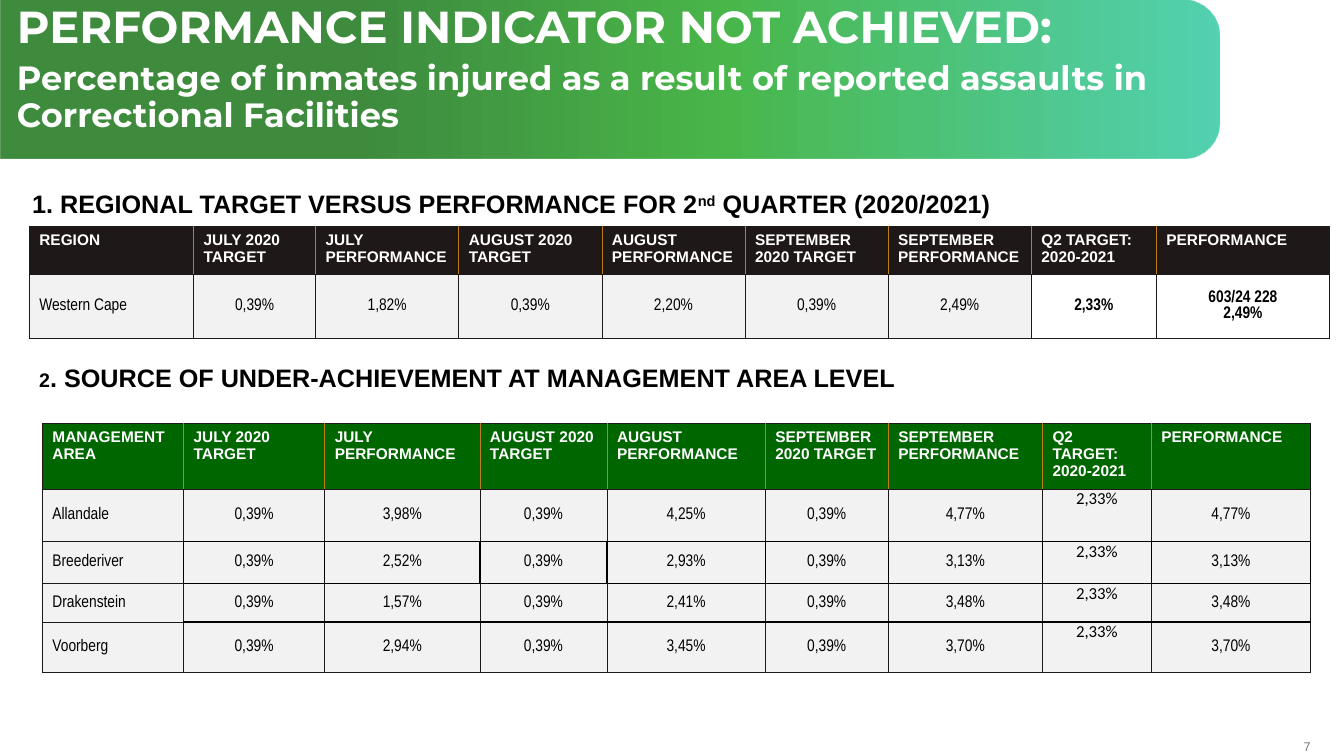
from dataclasses import dataclass

from lxml import etree
from pptx import Presentation
from pptx.dml.color import RGBColor
from pptx.enum.shapes import MSO_SHAPE as Shape
from pptx.enum.text import MSO_ANCHOR as Anchor, PP_ALIGN as Align
from pptx.oxml import parse_xml
from pptx.oxml.ns import nsdecls, qn
from pptx.util import Emu, Pt

PX = 9144


@dataclass(frozen=True)
class Theme:
    white: str = "FFFFFF"
    black: str = "000000"
    ink: str = "1E1918"
    green: str = "006600"
    orange: str = "BF7B17"
    cell: str = "F2F2F2"
    grey: str = "77787B"
    banner: tuple = ((30, "006600", 75), (59, "009900", 71), (100, "00BC8D", 67))
    title_font: str = "Montserrat"
    font: str = "Arial"
    narrow: str = "Arial Narrow"
    plain: str = "Calibri"
    title: int = 32
    subtitle: int = 24
    heading: int = 18
    small_heading: int = 14
    body: int = 12
    header: int = 11
    number: int = 9


THEME = Theme()
MONTHS = ["JULY 2020\vTARGET", "JULY PERFORMANCE", "AUGUST 2020\vTARGET",
          "AUGUST PERFORMANCE", "SEPTEMBER 2020 TARGET", "SEPTEMBER PERFORMANCE",
          "Q2 TARGET: 2020-2021", "PERFORMANCE"]
TARGET, Q2_TARGET = "0,39%", "2,33%"
Q2_COLUMN = 7
HEAVY_SIDES = {2: "LRTB", 3: "TB", 4: "T"}


def px(*lengths):
    return [Emu(round(length * PX)) for length in lengths]


def style(font, size, name, color, bold=False):
    font.size, font.name, font.bold = Pt(size), name, bold
    font.color.rgb = RGBColor.from_string(color)


def add_text_frame(page, box):
    frame = page.shapes.add_textbox(*px(*box)).text_frame
    frame.word_wrap = True
    return frame


def add_banner(page, box):
    left, top, width, height = box
    shift = (width - height) / 2
    band = page.shapes.add_shape(
        Shape.ROUND_2_SAME_RECTANGLE, *px(left + shift, top - shift, height, width))
    band.rotation = 90
    band.adjustments[0] = 0.233
    band.adjustments[1] = 0
    band.shadow.inherit = False
    band.line.fill.background()
    stops = "".join(
        f'<a:gs pos="{place * 1000}"><a:srgbClr val="{color}">'
        f'<a:alpha val="{alpha * 1000}"/></a:srgbClr></a:gs>'
        for place, color, alpha in THEME.banner)
    gradient = parse_xml(
        f'<a:gradFill {nsdecls("a")} rotWithShape="1"><a:gsLst>{stops}</a:gsLst>'
        '<a:lin ang="16200000" scaled="0"/></a:gradFill>')
    band._element.spPr.find(qn("a:prstGeom")).addnext(gradient)

    frame = add_text_frame(page, (left + 6, top, width - 10, 57))
    frame.text = ("PERFORMANCE INDICATOR NOT ACHIEVED:\n"
                  "Percentage of inmates injured as a result of reported assaults in "
                  "Correctional Facilities")
    for para, size in zip(frame.paragraphs, (THEME.title, THEME.subtitle)):
        para.line_spacing, para.space_after = 0.9, Pt(6)
        style(para.font, size, THEME.title_font, THEME.white, True)


def add_heading(page, box, parts):
    para = add_text_frame(page, box).paragraphs[0]
    for text, size, raised in parts:
        span = para.add_run()
        span.text = text
        style(span.font, size, THEME.font, THEME.black, True)
        if raised:
            span._r.get_or_add_rPr().set("baseline", "30000")


def edge(row, column, last, side, heavy):
    if row == 0:
        inner = side == "L" and column > 0 or side == "R" and column < last
        return (THEME.orange if inner else THEME.ink), 0.5
    sides = HEAVY_SIDES.get(row, "") if column else "R" * (row == 2)
    return (THEME.black, 1) if heavy and side in sides else (THEME.ink, 0.5)


def add_edges(cell, edges):
    properties = cell._tc.get_or_add_tcPr()
    for side, (color, width) in edges.items():
        line = etree.SubElement(properties, qn(f"a:ln{side}"), w=str(Pt(width)))
        fill = etree.SubElement(line, qn("a:solidFill"))
        etree.SubElement(fill, qn("a:srgbClr"), val=color)


def add_results(page, box, columns, heights, rows, header_fill, summary):
    grid = page.shapes.add_table(len(rows), len(columns), *px(*box)).table
    grid.horz_banding = False
    for column, width in zip(grid.columns, px(*columns)):
        column.width = width
    for row, height in zip(grid.rows, px(*heights)):
        row.height = height
    last = len(columns) - 1
    for r, values in enumerate(rows):
        for c, value in enumerate(values):
            cell = grid.cell(r, c)
            add_edges(cell, {side: edge(r, c, last, side, not summary) for side in "LRTB"})
            strong = summary and c >= Q2_COLUMN
            plain = not summary and c == Q2_COLUMN
            fill = header_fill if r == 0 else THEME.white if strong else THEME.cell
            cell.fill.solid()
            cell.fill.fore_color.rgb = RGBColor.from_string(fill)
            cell.text_frame.text = value
            if r and plain:
                cell.margin_left = cell.margin_right = cell.margin_top = cell.margin_bottom = 0
            elif r:
                cell.vertical_anchor = Anchor.MIDDLE
            for para in cell.text_frame.paragraphs:
                if r == 0:
                    style(para.font, THEME.header, THEME.font, THEME.white, True)
                    continue
                para.alignment = Align.CENTER if c else Align.LEFT
                style(para.font, THEME.body, THEME.plain if plain else THEME.narrow,
                      THEME.black, strong)


def add_page_number(page, box, number):
    frame = add_text_frame(page, box)
    frame.margin_left = frame.margin_right = frame.margin_top = frame.margin_bottom = 0
    frame.vertical_anchor = Anchor.MIDDLE
    para = frame.paragraphs[0]
    para.text = number
    para.alignment = Align.RIGHT
    style(para.font, THEME.number, THEME.font, THEME.grey)


def result_row(name, july, august, september, result):
    return [name, TARGET, july, TARGET, august, TARGET, september, Q2_TARGET, result]


def main():
    deck = Presentation()
    deck.slide_width, deck.slide_height = px(1333, 750)
    page = deck.slides.add_slide(deck.slide_layouts[6])
    add_page_number(page, (1261, 733, 39, 15), "7")
    add_banner(page, (1, 0, 1208, 157))
    add_heading(page, (22, 182, 976, 40), [
        ("1. REGIONAL TARGET VERSUS PERFORMANCE FOR 2", THEME.heading, False),
        ("nd", THEME.heading, True),
        (" QUARTER (2020/2021)", THEME.heading, False)])
    add_results(page, (29, 225, 1288, 111), [163, 121] + [142] * 5 + [124, 172], [47, 64], [
        ["REGION"] + MONTHS,
        result_row("Western Cape", "1,82%", "2,20%", "2,49%", "603/24 228\n2,49%"),
    ], THEME.ink, summary=True)
    areas = [("Allandale", "3,98%", "4,25%", "4,77%"),
             ("Breederiver", "2,52%", "2,93%", "3,13%"),
             ("Drakenstein", "1,57%", "2,41%", "3,48%"),
             ("Voorberg", "2,94%", "3,45%", "3,70%")]
    add_results(page, (42, 420, 1258, 246), [140, 140, 154, 126, 157, 122, 153, 108, 158],
                [51, 52, 42, 38, 50],
                [["MANAGEMENT AREA"] + MONTHS] + [result_row(*area, area[-1]) for area in areas],
                THEME.green, summary=False)
    add_heading(page, (29, 355, 921, 40), [
        ("2", THEME.small_heading, False),
        (". SOURCE OF UNDER-ACHIEVEMENT AT MANAGEMENT AREA LEVEL", THEME.heading, False)])
    deck.save("out.pptx")


if __name__ == "__main__":
    main()
